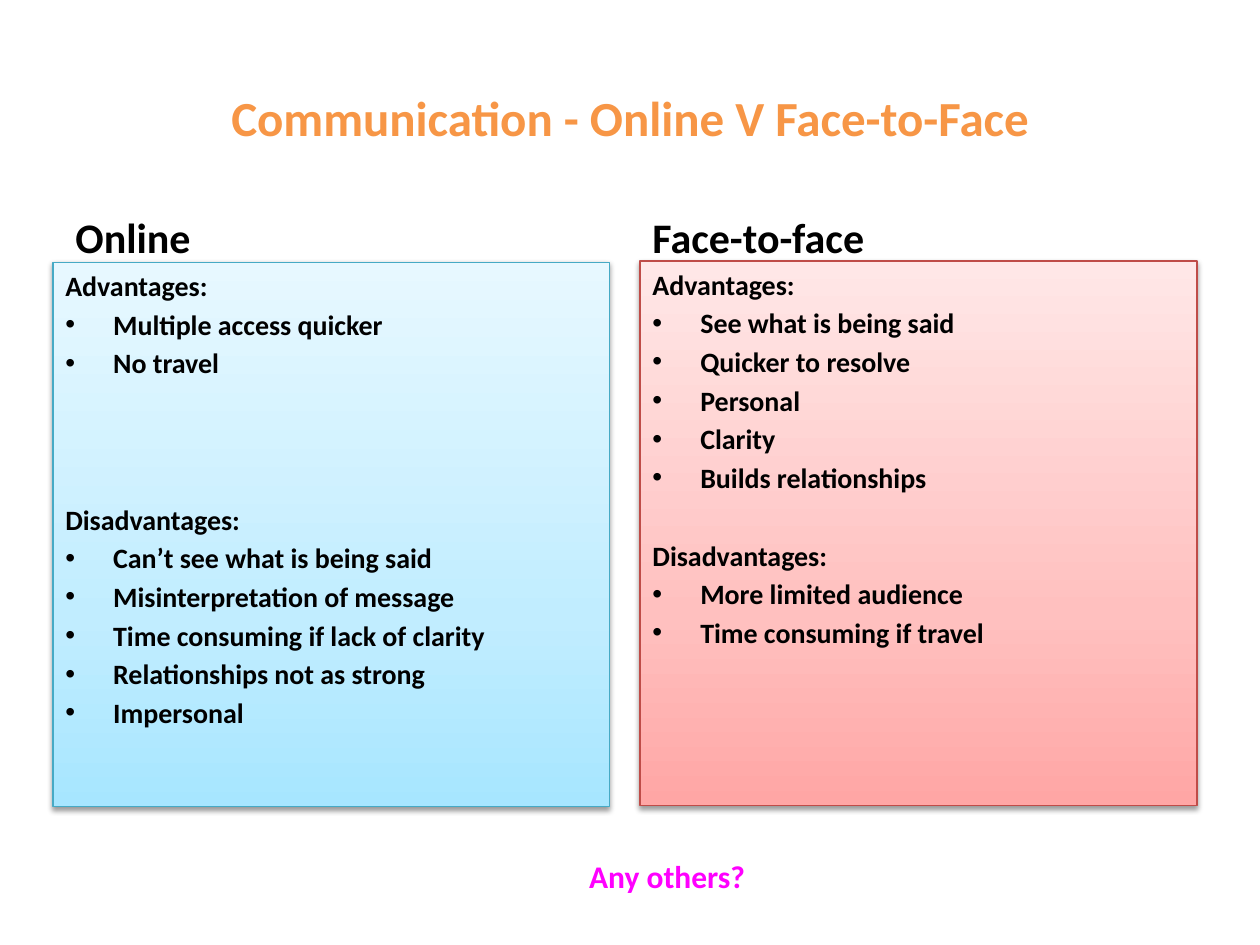
"""Build a slide that compares online and face-to-face communication."""
import copy

import lxml.etree
import pptx
import pptx.dml.color
import pptx.enum.shapes
import pptx.enum.text
import pptx.oxml
import pptx.oxml.ns
import pptx.util

deck = pptx.Presentation()
deck.slide_width, deck.slide_height = pptx.util.Inches(10), pptx.util.Inches(7.5)
slide = deck.slides.add_slide(deck.slide_layouts[6])
qn = pptx.oxml.ns.qn
align = pptx.enum.text.PP_ALIGN
anchor = pptx.enum.text.MSO_ANCHOR


def hue(code):
    return pptx.dml.color.RGBColor.from_string(code)


def write(shape, lines, size, code, side=align.LEFT, place=anchor.TOP):
    frame = shape.text_frame
    for key, val in {"word_wrap": True, "vertical_anchor": place}.items():
        setattr(frame, key, val)
    look = {"name": "Calibri", "size": pptx.util.Pt(size), "bold": True}
    for num, (text, gap) in enumerate(lines):
        para = frame.paragraphs[0] if num == 0 else frame.add_paragraph()
        para.alignment, para.space_before = side, pptx.util.Pt(gap)
        run = para.add_run()
        run.text = text
        for key, val in look.items():
            setattr(run.font, key, val)
        run.font.color.rgb = hue(code)


wide, high = deck.slide_width, deck.slide_height
labels = [
    ("Communication - Online V Face-to-Face", (0.05, 0.04, 0.9, 0.1667), 28, "F79646", align.CENTER, anchor.MIDDLE),
    ("Online", (0.05, 0.19, 0.442, 0.0933), 24, "000000", align.LEFT, anchor.BOTTOM),
    ("Face-to-face", (0.508, 0.19, 0.442, 0.0933), 24, "000000", align.LEFT, anchor.BOTTOM),
    ("Any others?", (0.167, 0.9, 0.725, 0.0533), 18, "FF00FF", align.CENTER, anchor.TOP),
]
for text, (x, y, w, h), size, code, side, place in labels:
    box = slide.shapes.add_textbox(int(x * wide), int(y * high), int(w * wide), int(h * high))
    write(box, [(text, 0)], size, code, side, place)

panels = [
    (0.042, 0.2777, "46AAC5", ["A7E6FF", "C1EDFF", "E7F8FF"], 3,
     ["Multiple access quicker", "No travel"],
     ["Can’t see what is being said", "Misinterpretation of message",
      "Time consuming if lack of clarity", "Relationships not as strong", "Impersonal"]),
    (0.508, 0.2763, "BF4C48", ["FFA6A5", "FFC0BF", "FFE7E7"], 1,
     ["See what is being said", "Quicker to resolve", "Personal", "Clarity", "Builds relationships"],
     ["More limited audience", "Time consuming if travel"]),
]
gap, pitch = 2.88, 22.4
shade = (
    '<a:effectLst xmlns:a="http://schemas.openxmlformats.org/drawingml/2006/main">'
    '<a:outerShdw blurRad="40000" dist="20000" dir="5400000" rotWithShape="0">'
    '<a:srgbClr val="000000"><a:alpha val="38000"/></a:srgbClr></a:outerShdw></a:effectLst>'
)
for x, y, edge, tints, skip, pros, cons in panels:
    card = slide.shapes.add_shape(
        pptx.enum.shapes.MSO_SHAPE.RECTANGLE,
        int(x * wide), int(y * high), int(0.442 * wide), int(0.576 * high))
    card.fill.gradient()
    card.fill.gradient_angle = 90
    props = card._element.spPr
    stops = props.find(".//" + qn("a:gsLst"))
    stops.append(copy.deepcopy(stops[-1]))
    for stop, spot, tint in zip(card.fill.gradient_stops, (0, 0.35, 1), tints):
        stop.position, stop.color.rgb = spot, hue(tint)
    card.line.color.rgb, card.line.width = hue(edge), pptx.util.Pt(0.75)
    props.append(pptx.oxml.parse_xml(shade))

    lines = [("Advantages:", gap)] + [(item, gap) for item in pros]
    lines += [("Disadvantages:", gap + skip * pitch)] + [(item, gap) for item in cons]
    write(card, lines, 16, "000000")
    for para in card.text_frame.paragraphs:
        if not para.text.endswith(":"):
            form = para._p.get_or_add_pPr()
            form.set("marL", str(pptx.util.Inches(0.38)))
            form.set("indent", str(pptx.util.Inches(-0.38)))
            lxml.etree.SubElement(form, qn("a:buFont")).set("typeface", "Arial")
            lxml.etree.SubElement(form, qn("a:buChar")).set("char", "•")

deck.save("out.pptx")
